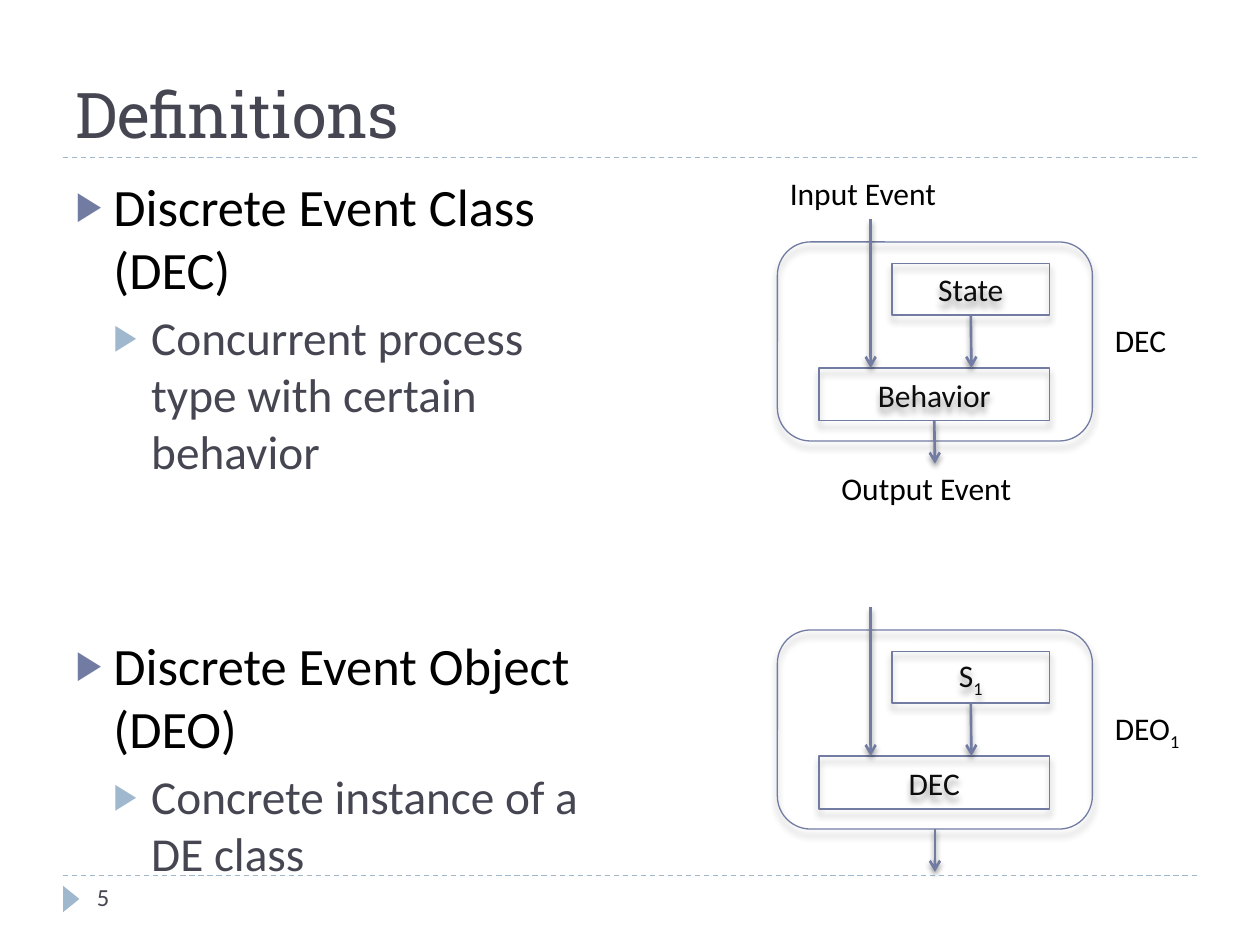
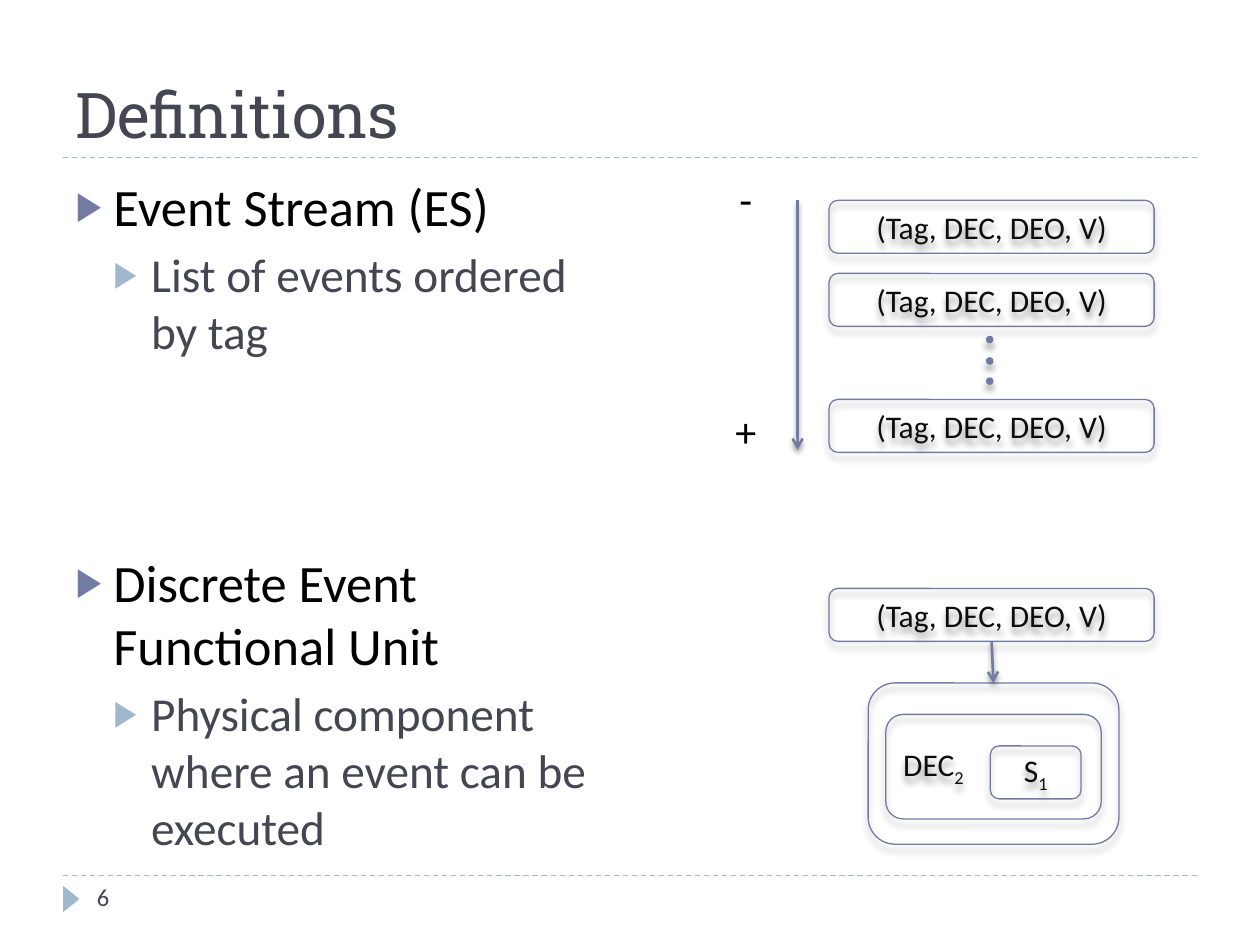
from lxml import etree
from pptx import Presentation
from pptx.dml.color import RGBColor
from pptx.enum.dml import MSO_LINE
from pptx.enum.shapes import MSO_CONNECTOR, MSO_SHAPE
from pptx.enum.text import MSO_ANCHOR, MSO_AUTO_SIZE, PP_ALIGN
from pptx.oxml.ns import qn
from pptx.util import Pt

PX = 9144  # EMU per px, 100 px to the inch
STRAIGHT = MSO_CONNECTOR.STRAIGHT
RECTANGLE, ROUNDED = MSO_SHAPE.RECTANGLE, MSO_SHAPE.ROUNDED_RECTANGLE
TRIANGLE, OVAL = MSO_SHAPE.ISOSCELES_TRIANGLE, MSO_SHAPE.OVAL
LEFT, CENTER = PP_ALIGN.LEFT, PP_ALIGN.CENTER
TOP, BOTTOM = 0, 2  # connection sites

ACCENT = "727CA3"
PALE = "9FB8CD"
SLATE = "464653"
BLACK = "000000"
BOX_TEXT = "0D0D0D"
DOT = "6E79A7"
color = RGBColor.from_string

# For each level: indent, space before, bullet colour, size, text colour
LEVELS = [(30, 12, ACCENT, 30, BLACK), (60, 5, PALE, 27, SLATE)]
EVENT = "(Tag, DEC, DEO, V)"

# Page number, then list items as (level, text, extra space before in points)
CONTENT = [
    ("5", [
        (0, "Discrete Event Class (DEC)", 0),
        (1, "Concurrent process type with certain behavior", 0),
        (0, "Discrete Event Object (DEO)", 76),
        (1, "Concrete instance of a DE class", 0),
    ]),
    ("6", [
        (0, "Event Stream (ES)", 0),
        (1, "List of events ordered by tag", 0),
        (0, "Discrete Event Functional Unit", 97),
        (1, "Physical component where an event can be executed", 0),
    ]),
]

boxes, arrows = [], []


def write_text(shape, text, size=18, text_color=BLACK, align=LEFT, font="Calibri"):
    """Fill a shape with one paragraph; what follows "_" becomes a subscript."""
    shape.text_frame.word_wrap = True
    paragraph = shape.text_frame.paragraphs[0]
    paragraph.alignment = align
    paragraph.font.name = font
    paragraph.font.size = Pt(size)
    paragraph.font.color.rgb = color(text_color)
    base, _, subscript = text.partition("_")
    paragraph.add_run().text = base
    if subscript:
        run = paragraph.add_run()
        run.text = subscript
        run.font._element.set("baseline", "-25000")


def add_box(shapes, kind, bounds, text="", align=CENTER):
    box = shapes.add_shape(kind, *[value * PX for value in bounds])
    box.fill.background()
    if text:
        box.text_frame.vertical_anchor = MSO_ANCHOR.MIDDLE
        write_text(box, text, text_color=BOX_TEXT, align=align)
    boxes.append(box)
    return box


presentation = Presentation()
presentation.slide_width = 1000 * PX
presentation.slide_height = 750 * PX
layout = presentation.slide_layouts[1]
for placeholder in list(layout.placeholders):
    if placeholder.placeholder_format.idx >= 10:  # date, footer, number
        layout.shapes.element.remove(placeholder.element)

# Titles, lists and page numbers
slides = []
for page, items in CONTENT:
    slide = presentation.slides.add_slide(layout)
    slides.append(slide)
    title, body = slide.placeholders
    for placeholder, bounds in ((title, (50, 25, 900, 100)), (body, (50, 133, 442, 540))):
        placeholder.left, placeholder.top, placeholder.width, placeholder.height = [
            value * PX for value in bounds]
        placeholder.text_frame.auto_size = MSO_AUTO_SIZE.NONE
    title.text_frame.vertical_anchor = MSO_ANCHOR.BOTTOM
    write_text(title, "Definitions", 36, SLATE, font="Roboto Slab")

    for number, (level, text, gap) in enumerate(items):
        indent, space, bullet_color, size, text_color = LEVELS[level]
        frame = body.text_frame
        paragraph = frame.add_paragraph() if number else frame.paragraphs[0]
        paragraph.text = text
        paragraph.level = level
        paragraph.space_before = Pt(space + gap)
        properties = paragraph._p.get_or_add_pPr()
        properties.set("marL", str(indent * PX))
        properties.set("indent", str(-30 * PX))
        bullet = etree.SubElement(properties, qn("a:buClr"))
        etree.SubElement(bullet, qn("a:srgbClr"), val=bullet_color)
        etree.SubElement(properties, qn("a:buSzPct"), val="76000")
        etree.SubElement(properties, qn("a:buChar"), char="▶")
        paragraph.font.name = "Calibri"
        paragraph.font.size = Pt(size)
        paragraph.font.color.rgb = color(text_color)

# Rules and page marker, moved to the layout that both slides share
shapes = slides[0].shapes
decorations = []
for y in (695, 125):
    rule = shapes.add_connector(STRAIGHT, 50 * PX, y * PX, 950 * PX, y * PX)
    rule.line.color.rgb = color(PALE)
    rule.line.width = Pt(0.75)
    rule.line.dash_style = MSO_LINE.DASH
    etree.SubElement(rule.element.spPr, qn("a:effectLst"))
    decorations.append(rule)
marker = shapes.add_shape(TRIANGLE, 46 * PX, 707 * PX, 21 * PX, 13 * PX)
marker.rotation = 90
marker.fill.solid()
marker.fill.fore_color.rgb = color(PALE)
marker.line.fill.background()
marker.shadow.inherit = False
decorations.append(marker)
for decoration in decorations:
    layout.shapes.element.append(decoration.element)

for slide, (page, items) in zip(slides, CONTENT):
    page_number = slide.shapes.add_textbox(67 * PX, 695 * PX, 217 * PX, 40 * PX)
    write_text(page_number, page, 14, SLATE)

# Slide 1: the class and one object of it
labels = []
for top, state_text, behavior_text, name in (
        (192, "State", "Behavior", "DEC"), (500, "S_1", "DEC", "DEO_1")):
    group = slides[0].shapes.add_group_shape().shapes
    frame = add_box(group, ROUNDED, (617, top, 250, 158))
    state = add_box(group, RECTANGLE, (708, top + 17, 125, 41), state_text)
    behavior = add_box(group, RECTANGLE, (650, top + 100, 183, 42), behavior_text)
    output_source = behavior if name == "DEC" else frame
    output_top = top + (142 if name == "DEC" else 158)
    for x, start, end, source in (
            (691, top - 18, top + 100, None),
            (771, top + 58, top + 100, state),
            (742, output_top, output_top + 34, output_source)):
        arrow = group.add_connector(STRAIGHT, x * PX, start * PX, x * PX, end * PX)
        if source:
            arrow.begin_connect(source, BOTTOM)
        arrows.append(arrow)
    labels.append((group, 875, top + 58, 92, 40, name, 18, LEFT))
    if name == "DEC":
        labels.append((group, 617, 133, 148, 40, "Input Event", 18, LEFT))
        labels.append((group, 658, 367, 167, 40, "Output Event", 18, LEFT))

# Slide 2: the event stream
stream = slides[1].shapes.add_group_shape().shapes
for y in (159, 217, 317):
    add_box(stream, ROUNDED, (658, y, 258, 42), EVENT)
for y in (267, 284, 300):
    dot = add_box(stream, OVAL, (783, y, 5, 5))
    dot.fill.solid()
    dot.fill.fore_color.rgb = color(DOT)
arrows.append(stream.add_connector(STRAIGHT, 633 * PX, 159 * PX, 633 * PX, 357 * PX))
labels.append((stream, 567, 133, 50, 50, "-", 24, CENTER))
labels.append((stream, 567, 317, 50, 50, "+", 24, CENTER))

# Slide 2: the functional unit
unit = slides[1].shapes.add_group_shape().shapes
event = add_box(unit, ROUNDED, (658, 467, 258, 42), EVENT)
unit_frame = add_box(unit, ROUNDED, (689, 542, 199, 128))
add_box(unit, ROUNDED, (703, 567, 171, 83), "DEC_2", LEFT)
add_box(unit, ROUNDED, (786, 592, 72, 42), "S_1")
dispatch = unit.add_connector(STRAIGHT, 787 * PX, 509 * PX, 788 * PX, 542 * PX)
dispatch.begin_connect(event, BOTTOM)
dispatch.end_connect(unit_frame, TOP)
arrows.append(dispatch)

for group, left, top, width, height, text, size, align in labels:
    label = group.add_textbox(left * PX, top * PX, width * PX, height * PX)
    label.text_frame.auto_size = MSO_AUTO_SIZE.SHAPE_TO_FIT_TEXT
    write_text(label, text, size, align=align)

# Lines and shadows of all boxes and arrows
for members, width, blur, distance in ((boxes, 0.75, 4, 3.4), (arrows, 1.5, 3, 2)):
    for shape in members:
        shape.line.color.rgb = color(ACCENT)
        shape.line.width = Pt(width)
        effects = etree.SubElement(shape.element.spPr, qn("a:effectLst"))
        shadow = etree.SubElement(
            effects, qn("a:outerShdw"), blurRad=str(Pt(blur)), dist=str(Pt(distance)),
            dir="5400000", rotWithShape="0")
        shade = etree.SubElement(shadow, qn("a:srgbClr"), val=BLACK)
        etree.SubElement(shade, qn("a:alpha"), val="40000")
for arrow in arrows:
    line = arrow.element.spPr.find(qn("a:ln"))
    etree.SubElement(line, qn("a:tailEnd"), type="arrow")

presentation.save("out.pptx")
